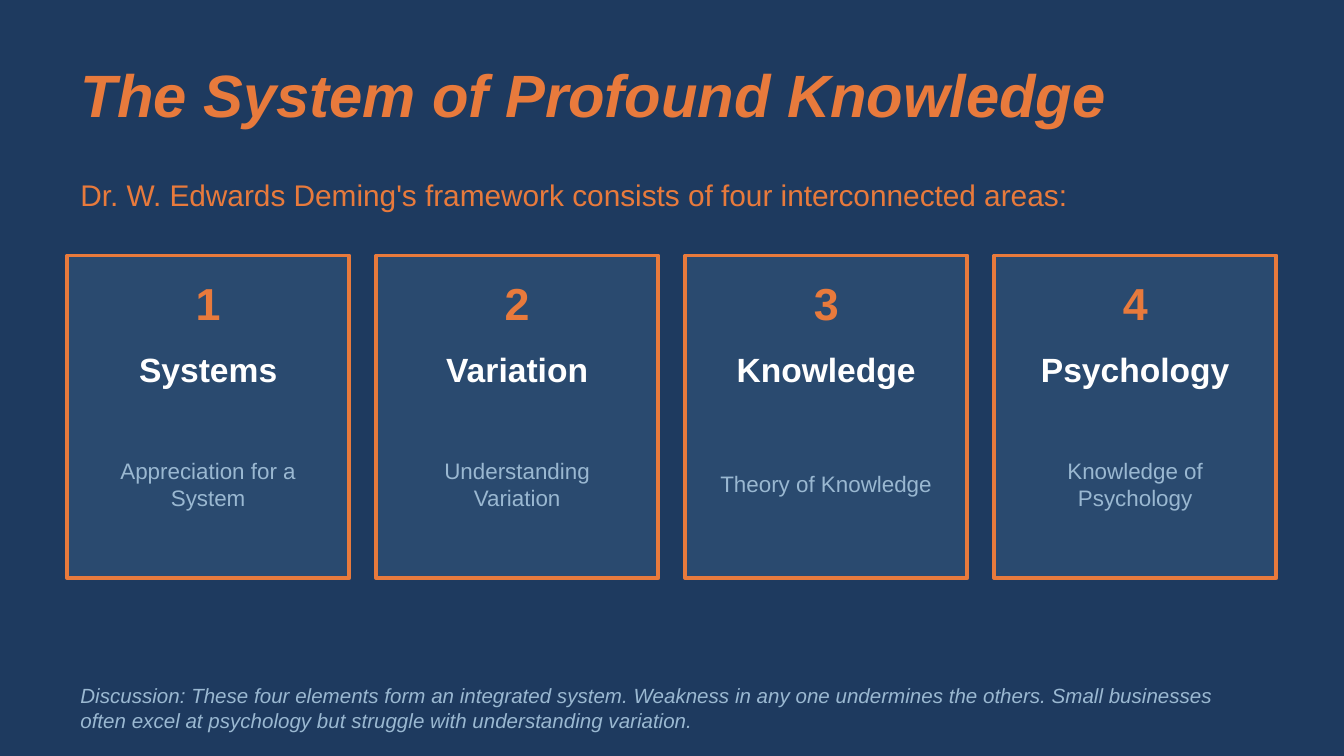
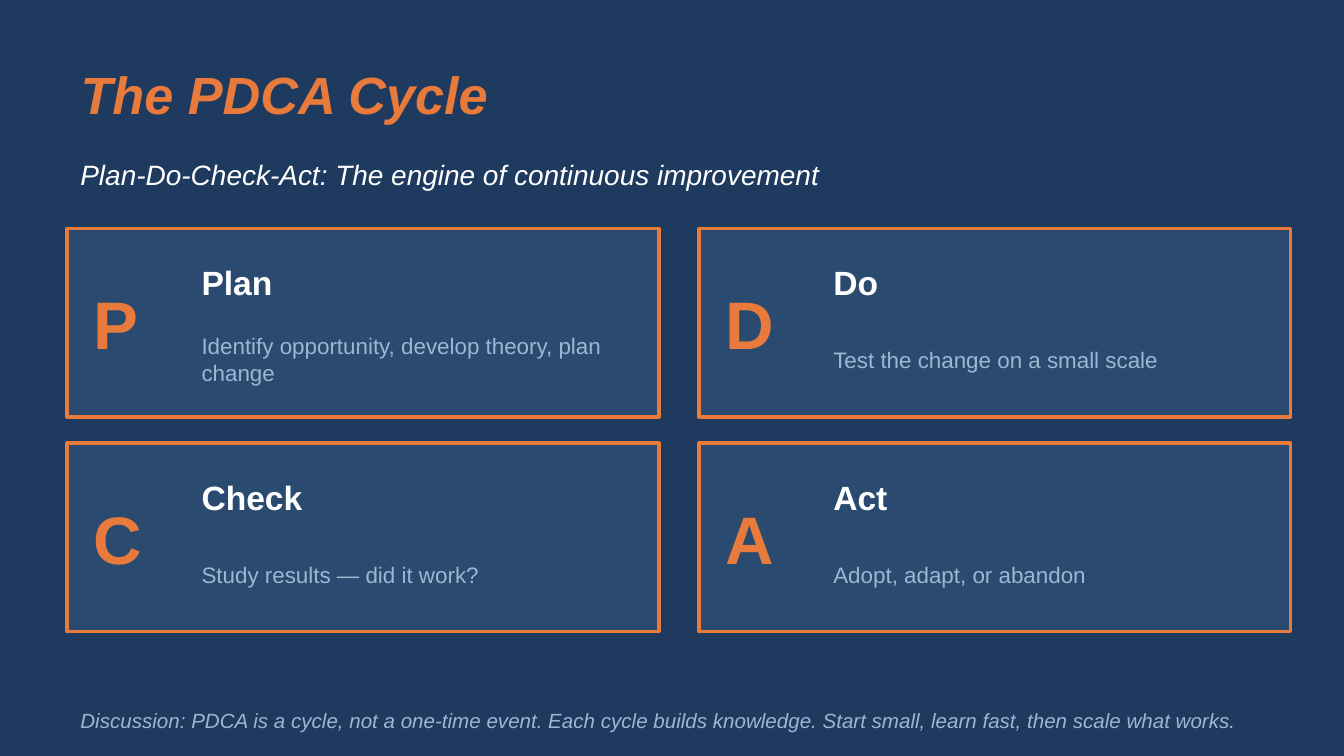
"""Builds two slides on Deming's system of knowledge and the PDCA cycle."""
from dataclasses import dataclass

from pptx import Presentation
from pptx.dml.color import RGBColor
from pptx.enum.shapes import MSO_SHAPE as Shape
from pptx.enum.text import MSO_ANCHOR as Anchor, MSO_AUTO_SIZE as AutoSize, PP_ALIGN as Align
from pptx.util import Cm, Pt

NAVY = RGBColor(0x1E, 0x3A, 0x5F)
PANEL = RGBColor(0x2A, 0x4A, 0x6F)
ORANGE = RGBColor(0xE8, 0x7A, 0x3C)
WHITE = RGBColor(0xFF, 0xFF, 0xFF)
MIST = RGBColor(0x9A, 0xB8, 0xD1)
FONT = "Arial"
MARGIN, TEXT_WIDTH = 1.27, 22.86


@dataclass
class Style:
    """Look of one piece of text."""
    size: float
    color: RGBColor
    bold: bool = False
    italic: bool = False
    align: Align = Align.LEFT
    anchor: Anchor = Anchor.MIDDLE


@dataclass
class Grid:
    """Card grid: origin, card size, gaps, and the (area, style) of each card text."""
    columns: int
    top: float
    width: float
    height: float
    gap_x: float
    gap_y: float
    card_texts: list


DISCUSSION = Style(11, MIST, italic=True, anchor=Anchor.BOTTOM)

PILLARS = Grid(4, 4.83, 5.33, 6.1, 0.51, 0, [
    ((0, 0.25, 5.33, 1.27), Style(24, ORANGE, bold=True, align=Align.CENTER)),
    ((0, 1.52, 5.33, 1.27), Style(18, WHITE, bold=True, align=Align.CENTER)),
    ((0.25, 3.05, 4.83, 2.54), Style(12, MIST, align=Align.CENTER)),
])
STEPS = Grid(2, 4.32, 11.18, 3.56, 0.76, 0.5, [
    ((0.25, 0.25, 2.03, 3.05), Style(36, ORANGE, bold=True)),
    ((2.29, 0.38, 8.38, 1.27), Style(18, WHITE, bold=True)),
    ((2.29, 1.65, 8.38, 1.65), Style(12, MIST)),
])

SLIDES = [
    {
        "title": "The System of Profound Knowledge",
        "title_size": 32,
        "subtitle": "Dr. W. Edwards Deming's framework consists of four interconnected areas:",
        "subtitle_style": Style(16, ORANGE),
        "subtitle_span": (3.05, 1.27),
        "grid": PILLARS,
        "cards": [
            ("1", "Systems", "Appreciation for a System"),
            ("2", "Variation", "Understanding Variation"),
            ("3", "Knowledge", "Theory of Knowledge"),
            ("4", "Psychology", "Knowledge of Psychology"),
        ],
        "discussion": "Discussion: These four elements form an integrated system. "
                      "Weakness in any one undermines the others. Small businesses often "
                      "excel at psychology but struggle with understanding variation.",
    },
    {
        "title": "The PDCA Cycle",
        "title_size": 28,
        "subtitle": "Plan-Do-Check-Act: The engine of continuous improvement",
        "subtitle_style": Style(15, WHITE, italic=True),
        "subtitle_span": (2.79, 1.02),
        "grid": STEPS,
        "cards": [
            ("P", "Plan", "Identify opportunity, develop theory, plan change"),
            ("D", "Do", "Test the change on a small scale"),
            ("C", "Check", "Study results — did it work?"),
            ("A", "Act", "Adopt, adapt, or abandon"),
        ],
        "discussion": "Discussion: PDCA is a cycle, not a one-time event. Each cycle builds "
                      "knowledge. Start small, learn fast, then scale what works.",
    },
]


def write(box, text, style):
    frame = box.text_frame
    frame.text = text
    frame.word_wrap = True
    frame.auto_size = AutoSize.NONE
    frame.vertical_anchor = style.anchor
    para = frame.paragraphs[0]
    para.alignment = style.align
    font = para.runs[0].font
    font.name, font.size = FONT, Pt(style.size)
    font.bold, font.italic = style.bold, style.italic
    font.color.rgb = style.color


def add_text(page, area, text, style):
    write(page.shapes.add_textbox(*map(Cm, area)), text, style)


def add_title(page, text, size):
    title = page.shapes.title
    title.left, title.top = Cm(MARGIN), Cm(0.76)
    title.width, title.height = Cm(TEXT_WIDTH), Cm(2.03)
    write(title, text, Style(size, ORANGE, bold=True, italic=True))


def add_cards(page, grid, cards):
    for index, texts in enumerate(cards):
        row, column = divmod(index, grid.columns)
        left = MARGIN + column * (grid.width + grid.gap_x)
        top = grid.top + row * (grid.height + grid.gap_y)
        area = map(Cm, (left, top, grid.width, grid.height))
        card = page.shapes.add_shape(Shape.RECTANGLE, *area)
        card.shadow.inherit = False
        card.fill.solid()
        card.fill.fore_color.rgb = PANEL
        card.line.color.rgb = ORANGE
        card.line.width = Pt(2)
        for text, ((x, y, width, height), style) in zip(texts, grid.card_texts):
            add_text(page, (left + x, top + y, width, height), text, style)


def main():
    deck = Presentation()
    deck.slide_width, deck.slide_height = Cm(25.4), Cm(14.29)
    background = deck.slide_master.background.fill
    background.solid()
    background.fore_color.rgb = NAVY
    for content in SLIDES:
        page = deck.slides.add_slide(deck.slide_layouts[5])
        add_title(page, content["title"], content["title_size"])
        top, height = content["subtitle_span"]
        add_text(page, (MARGIN, top, TEXT_WIDTH, height),
                 content["subtitle"], content["subtitle_style"])
        add_cards(page, content["grid"], content["cards"])
        add_text(page, (MARGIN, 12.19, TEXT_WIDTH, 1.78), content["discussion"], DISCUSSION)
    deck.save("out.pptx")


if __name__ == "__main__":
    main()
